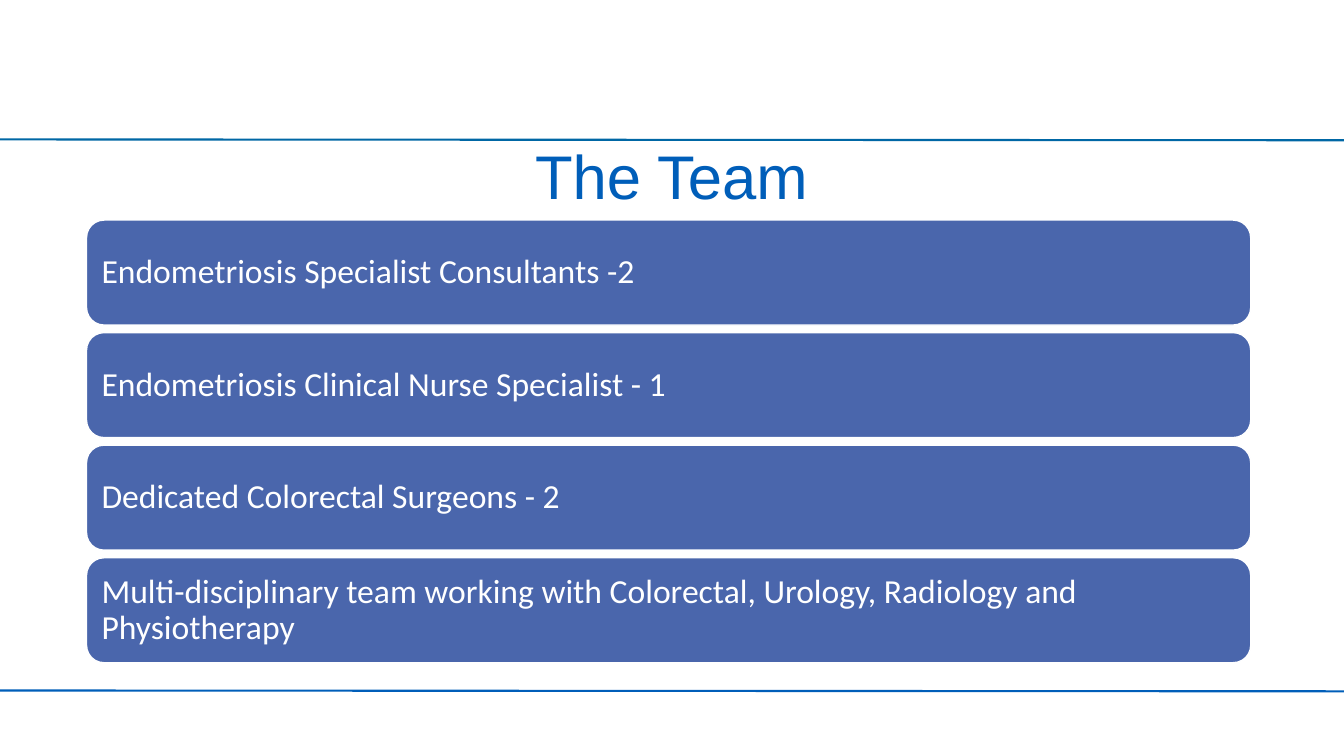
from dataclasses import dataclass

from lxml import etree
from pptx import Presentation
from pptx.dml.color import RGBColor
from pptx.enum.shapes import MSO_CONNECTOR, MSO_SHAPE
from pptx.enum.text import MSO_ANCHOR, PP_ALIGN
from pptx.oxml.ns import qn
from pptx.shapes.base import BaseShape
from pptx.slide import Slide
from pptx.util import Emu, Pt

STRAIGHT = MSO_CONNECTOR.STRAIGHT
ROUNDED = MSO_SHAPE.ROUNDED_RECTANGLE
TOP, MIDDLE = MSO_ANCHOR.TOP, MSO_ANCHOR.MIDDLE
LEFT, CENTER = PP_ALIGN.LEFT, PP_ALIGN.CENTER
EMU_PER_PX = 7620
SLIDE_WIDTH, SLIDE_HEIGHT = 1600, 900


@dataclass(frozen=True)
class Theme:
    white: str = "FFFFFF"
    bar: str = "4A66AC"
    title: str = "005EB9"
    header_rule: str = "0067A5"
    footer_rule: str = "005EB9"
    title_font: str = "Arial"
    body_font: str = "Calibri"
    title_size: int = 44
    body_size: int = 24
    rule_width: float = 1.5
    bar_outline: float = 1


@dataclass(frozen=True)
class Rule:
    top: int
    color: str


@dataclass(frozen=True)
class Bar:
    top: int
    text: str


THEME = Theme()
RULES = [Rule(166, THEME.header_rule), Rule(822, THEME.footer_rule)]
TEAM = [
    "Endometriosis Specialist Consultants -2",
    "Endometriosis Clinical Nurse Specialist - 1",
    "Dedicated Colorectal Surgeons - 2",
    "Multi-disciplinary team working with Colorectal, Urology, Radiology and Physiotherapy",
]
BAR_LEFT, BAR_WIDTH, BAR_HEIGHT = 103, 1386, 125
FIRST_BAR_TOP, BAR_PITCH = 262, 134
BARS = [Bar(FIRST_BAR_TOP + row * BAR_PITCH, text) for row, text in enumerate(TEAM)]


def px(length: int) -> Emu:
    return Emu(length * EMU_PER_PX)


def rgb(color: str) -> RGBColor:
    return RGBColor.from_string(color)


def write_text(box: BaseShape, text: str, *, font: str, size: int, color: str,
               align: PP_ALIGN, anchor: MSO_ANCHOR, inset_x: int, inset_y: int) -> None:
    frame = box.text_frame
    frame.word_wrap = True
    frame.vertical_anchor = anchor
    frame.margin_left = frame.margin_right = px(inset_x)
    frame.margin_top = frame.margin_bottom = px(inset_y)
    para = frame.paragraphs[0]
    para.alignment = align
    para.line_spacing = 0.9
    span = para.add_run()
    span.text = text
    span.font.name = font
    span.font.size = Pt(size)
    span.font.color.rgb = rgb(color)


def draw_rule(slide: Slide, rule: Rule) -> None:
    line = slide.shapes.add_connector(
        STRAIGHT, 0, px(rule.top), px(SLIDE_WIDTH), px(rule.top + 1))
    line.line.color.rgb = rgb(rule.color)
    line.line.width = Pt(THEME.rule_width)
    etree.SubElement(line._element.spPr, qn("a:effectLst"))


def draw_title(slide: Slide, text: str) -> None:
    box = slide.shapes.add_textbox(px(239), px(168), px(1121), px(125))
    write_text(box, text, font=THEME.title_font, size=THEME.title_size, color=THEME.title,
               align=CENTER, anchor=TOP, inset_x=12, inset_y=6)


def draw_bar(slide: Slide, bar: Bar) -> None:
    box = slide.shapes.add_shape(
        ROUNDED, px(BAR_LEFT), px(bar.top), px(BAR_WIDTH), px(BAR_HEIGHT))
    box.shadow.inherit = False
    box.fill.solid()
    box.fill.fore_color.rgb = rgb(THEME.bar)
    box.line.color.rgb = rgb(THEME.white)
    box.line.width = Pt(THEME.bar_outline)
    write_text(box, bar.text, font=THEME.body_font, size=THEME.body_size, color=THEME.white,
               align=LEFT, anchor=MIDDLE, inset_x=12, inset_y=12)


def main() -> None:
    deck = Presentation()
    deck.slide_width, deck.slide_height = px(SLIDE_WIDTH), px(SLIDE_HEIGHT)
    slide = deck.slides.add_slide(deck.slide_layouts[6])
    for rule in RULES:
        draw_rule(slide, rule)
    draw_title(slide, "The Team")
    for bar in BARS:
        draw_bar(slide, bar)
    deck.save("out.pptx")


if __name__ == "__main__":
    main()
